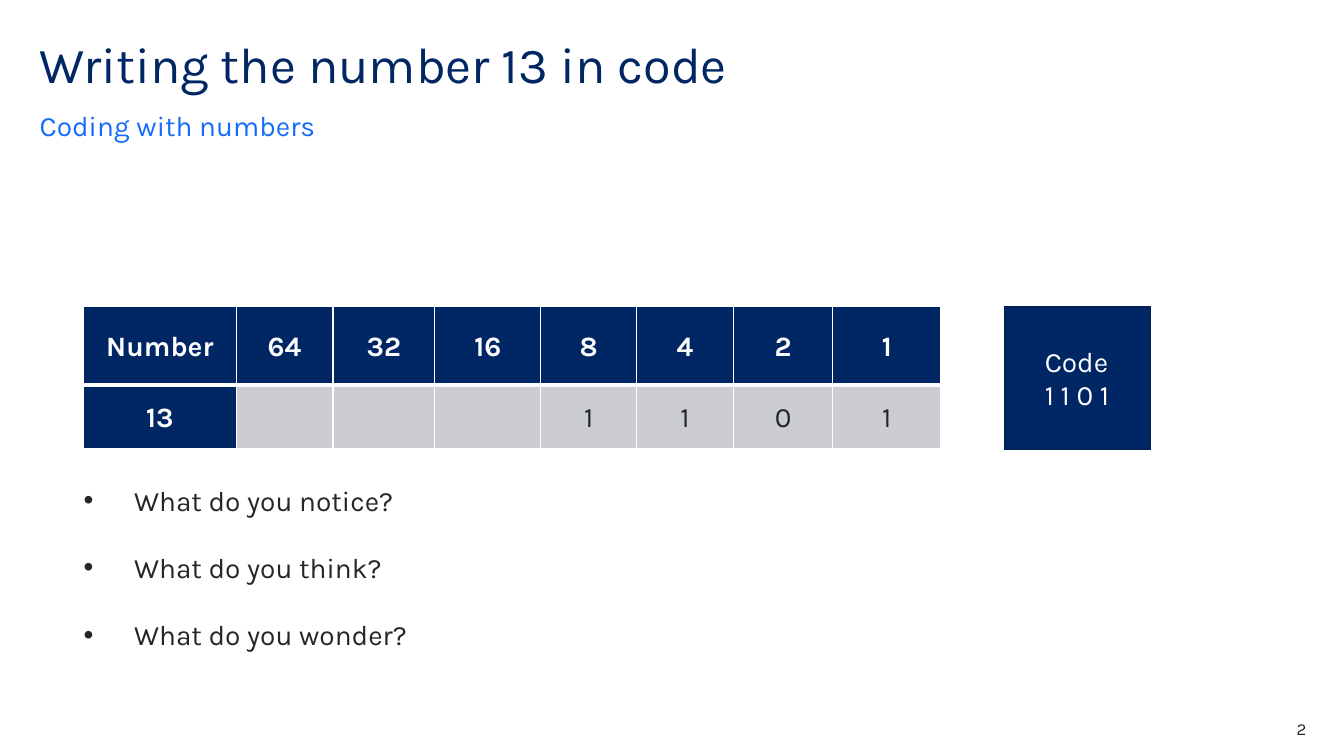
from dataclasses import dataclass

from lxml import etree
from pptx import Presentation
from pptx.dml.color import RGBColor
from pptx.enum.shapes import MSO_SHAPE
from pptx.enum.text import MSO_ANCHOR, PP_ALIGN
from pptx.oxml.ns import qn
from pptx.util import Cm, Pt

RECTANGLE = MSO_SHAPE.RECTANGLE
TOP, MIDDLE, BOTTOM = MSO_ANCHOR.TOP, MSO_ANCHOR.MIDDLE, MSO_ANCHOR.BOTTOM
LEFT, CENTER, RIGHT = PP_ALIGN.LEFT, PP_ALIGN.CENTER, PP_ALIGN.RIGHT


@dataclass(frozen=True)
class Theme:
    """Colours, font and type sizes of the lesson."""
    font: str = "Karla"
    navy: str = "002664"
    outline: str = "001C4A"
    blue: str = "146CFD"
    grey: str = "CCCDD3"
    ink: str = "22272B"
    white: str = "FFFFFF"
    title: int = 36
    body: int = 20
    small: int = 12


class LessonSlide:
    """Draws the elements of one slide in a shared style."""

    def __init__(self, slide, theme):
        self.shapes = slide.shapes
        self.theme = theme

    def set_lines(self, frame, lines, size, color, align=LEFT, bold=False,
                  spacing=1.0, after=0, indent=0, bullet=None):
        """Fill a text frame with one styled paragraph per line."""
        frame.text = "\n".join(lines)
        for paragraph in frame.paragraphs:
            properties = paragraph._p.get_or_add_pPr()
            if indent:
                properties.set("marL", str(Cm(indent)))
            if bullet:
                properties.set("indent", str(-Cm(indent)))
                etree.SubElement(properties, qn("a:buFont"), typeface="Arial")
                etree.SubElement(properties, qn("a:buChar"), char=bullet)
            paragraph.alignment = align
            paragraph.line_spacing = spacing
            paragraph.space_after = Pt(after)
            for font in [paragraph.font] + [run.font for run in paragraph.runs]:
                font.name = self.theme.font
                font.size = Pt(size)
                font.bold = bold
                font.color.rgb = RGBColor.from_string(color)

    def text(self, box, lines, size, color, anchor=TOP, **style):
        """Add a text box without margins."""
        frame = self.shapes.add_textbox(*map(Cm, box)).text_frame
        frame.word_wrap = True
        frame.vertical_anchor = anchor
        frame.margin_left = frame.margin_right = 0
        frame.margin_top = frame.margin_bottom = 0
        self.set_lines(frame, lines, size, color, **style)

    def panel(self, box, lines, indent):
        """Add a filled rectangle with text."""
        theme = self.theme
        panel = self.shapes.add_shape(RECTANGLE, *map(Cm, box))
        panel.shadow.inherit = False
        panel.fill.solid()
        panel.fill.fore_color.rgb = RGBColor.from_string(theme.navy)
        panel.line.color.rgb = RGBColor.from_string(theme.outline)
        panel.line.width = Pt(1)
        panel.text_frame.vertical_anchor = MIDDLE
        self.set_lines(panel.text_frame, lines, theme.body, theme.white,
                       indent=indent)

    def border(self, cell, side, points):
        """Draw one white edge of a cell."""
        line = etree.SubElement(cell._tc.get_or_add_tcPr(), qn(f"a:ln{side}"),
                                w=str(Pt(points)))
        fill = etree.SubElement(line, qn("a:solidFill"))
        etree.SubElement(fill, qn("a:srgbClr"), val=self.theme.white)

    def table(self, left, top, widths, heights, rows):
        """Add a table with a dark heading row and heading column."""
        theme = self.theme
        table = self.shapes.add_table(
            len(rows), len(widths), Cm(left), Cm(top),
            Cm(sum(widths)), Cm(sum(heights))).table
        for column, width in zip(table.columns, widths):
            column.width = Cm(width)
        for row, height in zip(table.rows, heights):
            row.height = Cm(height)
        for r, values in enumerate(rows):
            for c, value in enumerate(values):
                cell = table.cell(r, c)
                heading = r == 0 or c == 0
                edges = {"L": 1, "R": 1, "T": 3 if r == 1 else 1,
                         "B": 3 if r == 0 else 1}
                for side, points in edges.items():
                    self.border(cell, side, points)
                cell.fill.solid()
                cell.fill.fore_color.rgb = RGBColor.from_string(
                    theme.navy if heading else theme.grey)
                cell.vertical_anchor = MIDDLE
                cell.margin_left = cell.margin_right = Cm(0.05)
                cell.margin_top = cell.margin_bottom = Cm(0.05)
                self.set_lines(cell.text_frame, [value], theme.body,
                               theme.white if heading else theme.ink,
                               align=CENTER, bold=heading, spacing=1.07, after=8)


def main():
    """Build the slide and save it."""
    presentation = Presentation()
    presentation.slide_width, presentation.slide_height = Cm(33.87), Cm(19.05)
    theme = Theme()
    lesson = LessonSlide(
        presentation.slides.add_slide(presentation.slide_layouts[6]), theme)

    lesson.text((1, 1, 28, 1.52), ["Writing the number 13 in code"],
                theme.title, theme.navy, spacing=0.9)
    lesson.text((1, 2.72, 28, 0.86), ["Coding with numbers"],
                theme.body, theme.blue, anchor=BOTTOM, after=12)

    place_values = ["64", "32", "16", "8", "4", "2", "1"]
    digits = ["", "", "", "1", "1", "0", "1"]
    lesson.table(2.11, 7.72, [3.84, 2.44, 2.57, 2.67, 2.41, 2.44, 2.51, 2.72],
                 [1.98, 1.6], [["Number"] + place_values, ["13"] + digits])
    lesson.panel((25.32, 7.72, 3.68, 3.61), ["Code", "1 1 0 1"], indent=0.76)

    questions = [f"What do you {verb}?" for verb in ("notice", "think", "wonder")]
    lesson.text((2.11, 11.33, 22.86, 5.36), questions, theme.body, theme.ink,
                spacing=2.0, indent=1.27, bullet="•")
    lesson.text((30.91, 18.11, 2.01, 0.51), ["2"], theme.small, theme.ink,
                align=RIGHT)
    presentation.save("out.pptx")


if __name__ == "__main__":
    main()
